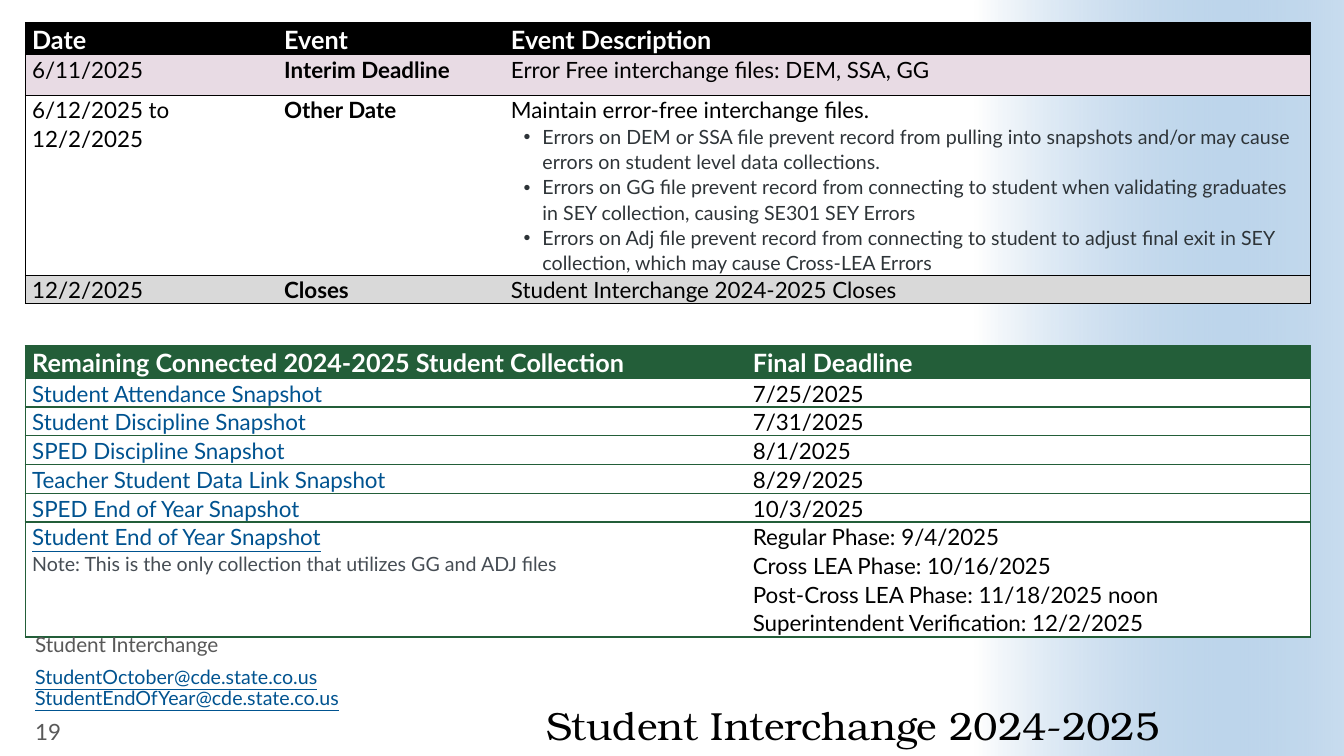
from lxml import etree
from pptx import Presentation
from pptx.dml.color import RGBColor
from pptx.enum.shapes import MSO_SHAPE
from pptx.enum.text import MSO_ANCHOR as ANCHOR, PP_ALIGN as ALIGN
from pptx.oxml import parse_xml
from pptx.oxml.ns import nsdecls, qn
from pptx.util import Pt

COLORS = {
    "black": "000000", "white": "FFFFFF", "pink": "E8DBE4", "silver": "D9D9D9",
    "green": "235E39", "link": "005390", "bullet": "2E3438", "note": "464D54",
    "footer": "595959", "sky": "488BC9",
}

ERRORS = [
    "Errors on DEM or SSA file prevent record from pulling into snapshots "
    "and/or may cause errors on student level data collections.",
    "Errors on GG file prevent record from connecting to student when "
    "validating graduates in SEY collection, causing SE301 SEY Errors",
    "Errors on Adj file prevent record from connecting to student to adjust "
    "final exit in SEY collection, which may cause Cross-LEA Errors",
]
EVENTS = [
    ("Date", "Event", "Event Description"),
    ("6/11/2025", "Interim Deadline", "Error Free interchange files: DEM, SSA, GG"),
    ("6/12/2025 to 12/2/2025", "Other Date", "Maintain error-free interchange files."),
    ("12/2/2025", "Closes", "Student Interchange 2024-2025 Closes"),
]
EVENT_FILLS = ["black", "pink", None, "silver"]
DEADLINES = [
    ("Remaining Connected 2024-2025 Student Collection", "Final Deadline"),
    ("Student Attendance Snapshot", "7/25/2025"),
    ("Student Discipline Snapshot", "7/31/2025"),
    ("SPED Discipline Snapshot", "8/1/2025"),
    ("Teacher Student Data Link Snapshot", "8/29/2025"),
    ("SPED End of Year Snapshot", "10/3/2025"),
    ("Student End of Year Snapshot",
     "Regular Phase: 9/4/2025\nCross LEA Phase: 10/16/2025\n"
     "Post-Cross LEA Phase: 11/18/2025 noon\nSuperintendent Verification: 12/2/2025"),
]


def rgb(name):
    return RGBColor.from_string(COLORS[name])


def add_text(p, text, size, color, bold=False, underline=False, font="Lato"):
    for i, line in enumerate(text.split("\n")):
        if i:
            p.add_line_break()
        r = p.add_run()
        r.text = line
        r.font.name = font
        r.font.size = Pt(size)
        r.font.bold = bold
        r.font.underline = underline
        r.font.color.rgb = rgb(color)


def add_bullet(tf, text):
    p = tf.add_paragraph()
    pPr = p._p.get_or_add_pPr()
    pPr.set("marL", str(Pt(22.5)))
    pPr.set("indent", str(Pt(-13.5)))
    etree.SubElement(pPr, qn("a:buFont"), typeface="Arial")
    etree.SubElement(pPr, qn("a:buChar"), char="•")
    p.line_spacing = 1.07
    add_text(p, text, 14, "bullet")


def add_box(s, x, y, w, h, text, size, color, spacing=1.0, anchor=ANCHOR.TOP,
            align=ALIGN.LEFT, inset=(7.2, 3.6), **style):
    tf = s.shapes.add_textbox(Pt(x), Pt(y), Pt(w), Pt(h)).text_frame
    tf.word_wrap = True
    tf.vertical_anchor = anchor
    tf.margin_left = tf.margin_right = Pt(inset[0])
    tf.margin_top = tf.margin_bottom = Pt(inset[1])
    p = tf.paragraphs[0]
    p.alignment = align
    p.line_spacing = spacing
    add_text(p, text, size, color, **style)


def set_borders(cell, sides, color, width):
    tcPr = cell._tc.get_or_add_tcPr()
    for i, side in enumerate("LRTB"):
        if side in sides:
            paint = f'<a:solidFill><a:srgbClr val="{COLORS[color]}"/></a:solidFill>'
        else:
            paint = "<a:noFill/>"
        tcPr.insert(i, parse_xml(
            f'<a:ln{side} {nsdecls("a")} w="{Pt(width)}">{paint}</a:ln{side}>'))


def style_cell(cell, fill, sides, border, width):
    cell.margin_left = cell.margin_right = Pt(5)
    cell.margin_top = cell.margin_bottom = 0
    if fill:
        cell.fill.solid()
        cell.fill.fore_color.rgb = rgb(fill)
    else:
        cell.fill.background()
    set_borders(cell, sides, border, width)


def add_grid(s, y, rows, widths, heights, fills, border, line, text_style):
    table = s.shapes.add_table(len(rows), len(widths), Pt(18), Pt(y),
                               Pt(sum(widths)), Pt(sum(heights))).table
    table.first_row = table.horz_banding = False
    for col, width in zip(table.columns, widths):
        col.width = Pt(width)
    for row, height in zip(table.rows, heights):
        row.height = Pt(height)
    for i, values in enumerate(rows):
        for j, text in enumerate(values):
            sides = "TB" + "L" * (j == 0) + "R" * (j == len(widths) - 1)
            cell = table.cell(i, j)
            style_cell(cell, fills[i], sides, border, line)
            p = cell.text_frame.paragraphs[0]
            p.line_spacing = 1.07
            if i == 0:
                add_text(p, text, 18, "white", bold=True)
            else:
                add_text(p, text, 16, **text_style(j))
    return table


def event_style(col):
    return {"color": "black", "bold": col == 1}


def deadline_style(col):
    return {"color": "black" if col else "link", "underline": col == 0}


def add_backdrop(s):
    sp = s.shapes.add_shape(MSO_SHAPE.RECTANGLE, Pt(558), Pt(138.24), Pt(540), Pt(263.52))
    sp.shadow.inherit = False
    sp.rotation = 270
    sp.line.fill.background()
    sp.fill.gradient()
    sp.fill.gradient_angle = 270
    first, last = sp.fill.gradient_stops
    first.color.rgb, first.position = rgb("white"), 0
    last.color.rgb, last.position = rgb("sky"), 1
    sky = sp._element.spPr.findall(".//" + qn("a:srgbClr"))[-1]
    etree.SubElement(sky, qn("a:alpha"), val="30000")


def main():
    prs = Presentation()
    prs.slide_width, prs.slide_height = Pt(960), Pt(540)
    s = prs.slides.add_slide(prs.slide_layouts[6])
    add_backdrop(s)
    add_box(s, 306.72, 464.4, 521.28, 70.56, "Student Interchange 2024-2025", 28, "black",
            spacing=0.9, anchor=ANCHOR.BOTTOM, align=ALIGN.RIGHT, inset=(0, 0),
            font="TeX Gyre Bonum")

    events = add_grid(s, 16, EVENTS, [180, 162, 576], [23, 28.8, 128, 20.5],
                      EVENT_FILLS, "black", 0.5, event_style)
    for error in ERRORS:
        add_bullet(events.cell(2, 2).text_frame, error)

    deadlines = add_grid(s, 247, DEADLINES, [514.8, 403.2], [23] + [20.5] * 5 + [82],
                         ["green"] + ["white"] * 6, "green", 1, deadline_style)
    p = deadlines.cell(6, 0).text_frame.paragraphs[0]
    p.add_line_break()
    add_text(p, "Note: This is the only collection that utilizes GG and ADJ files", 14, "note")

    add_box(s, 18, 451.44, 288.72, 22.32, "Student Interchange", 14.8, "footer", spacing=0.8)
    add_box(s, 18, 473.04, 280, 37.44,
            "StudentOctober@cde.state.co.us\nStudentEndOfYear@cde.state.co.us",
            14, "link", spacing=0.9, underline=True)
    add_box(s, 18, 511.2, 61.2, 22.32, "19", 16, "footer", anchor=ANCHOR.MIDDLE)
    prs.save("out.pptx")


if __name__ == "__main__":
    main()
